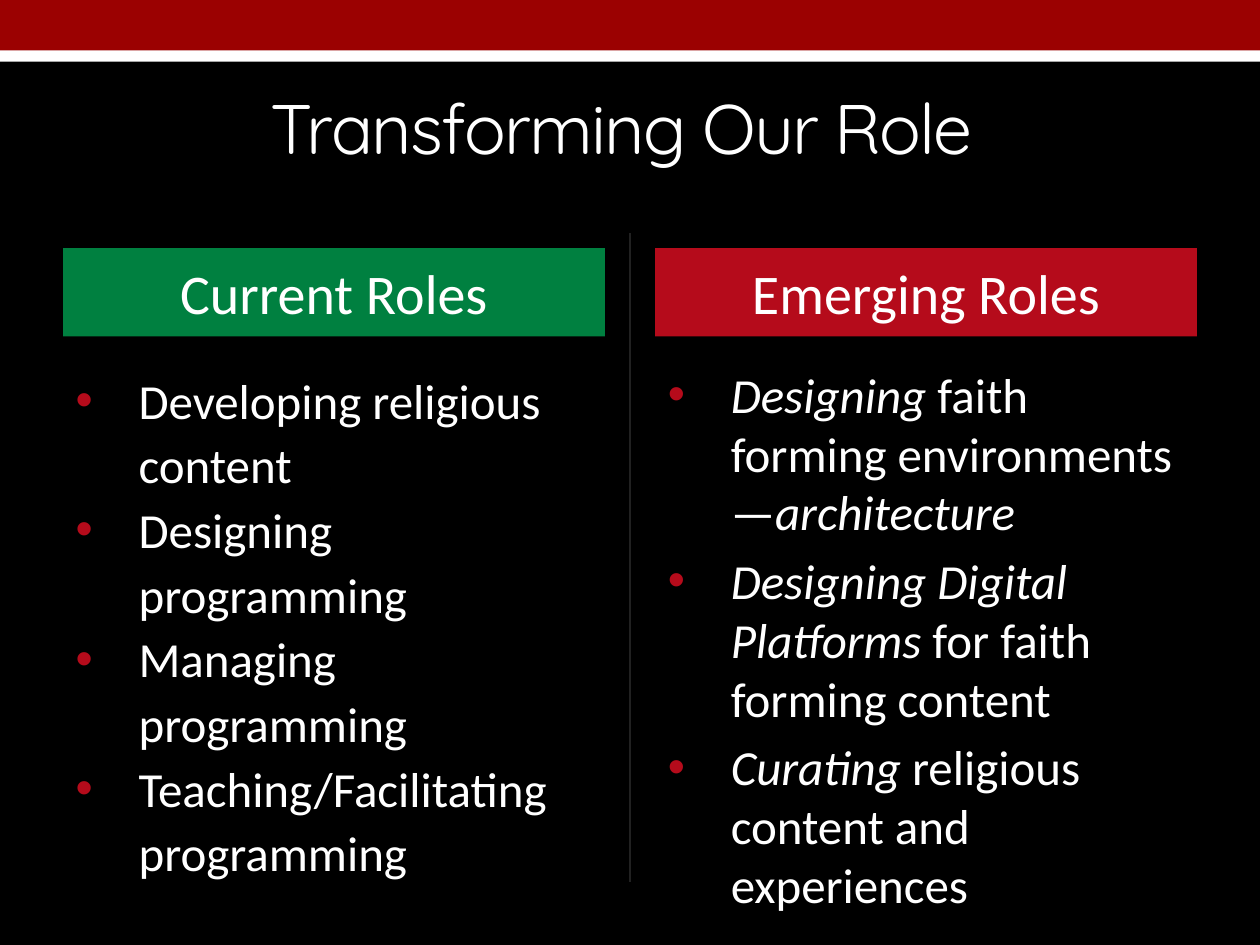
from dataclasses import dataclass

from lxml.etree import SubElement
from pptx import Presentation
from pptx.dml.color import RGBColor
from pptx.enum.shapes import MSO_CONNECTOR, MSO_SHAPE
from pptx.enum.text import MSO_ANCHOR, MSO_AUTO_SIZE, PP_ALIGN
from pptx.oxml.ns import qn
from pptx.util import Inches, Pt

BLACK = RGBColor(0x00, 0x00, 0x00)
WHITE = RGBColor(0xFF, 0xFF, 0xFF)
DARK_RED = RGBColor(0x9B, 0x01, 0x01)
RED = RGBColor(0xB5, 0x0B, 0x1B)
GREEN = RGBColor(0x00, 0x80, 0x40)
GREY = RGBColor(0x21, 0x21, 0x21)

COMPARISON_LAYOUT = 4
COLUMN_WIDTH = 4.3
INDENT = Inches(0.5)
TITLE_FONT = {"name": "Quicksand", "size": Pt(40), "bold": False}
HEADING_FONT = {"name": "Calibri", "size": Pt(32), "bold": False}
BULLET_FONT = {"name": "Calibri", "size": Pt(28), "bold": False}


@dataclass(frozen=True)
class Run:
    text: str
    italic: bool = False


@dataclass(frozen=True)
class Column:
    heading: str
    color: RGBColor
    left: float
    placeholders: tuple[int, int]
    line_spacing: float
    space_before: float
    bullets: list[list[Run]]


COLUMNS = [
    Column("Current Roles", GREEN, 0.5, (1, 2), 1.1, 0, [
        [Run("Developing religious content")],
        [Run("Designing programming")],
        [Run("Managing programming")],
        [Run("Teaching/Facilitating programming")],
    ]),
    Column("Emerging Roles", RED, 5.2, (3, 4), 1.0, 5.6, [
        [Run("Designing", True), Run(" faith forming environments—"),
         Run("architecture", True)],
        [Run("Designing Digital Platforms", True),
         Run(" for faith forming content")],
        [Run("Curating", True), Run(" religious content and experiences")],
    ]),
]


def place(shape, left: float, top: float, width: float, height: float,
          anchor: MSO_ANCHOR):
    """Move a placeholder and return its text frame."""
    shape.left, shape.top = Inches(left), Inches(top)
    shape.width, shape.height = Inches(width), Inches(height)
    frame = shape.text_frame
    frame.word_wrap = True
    frame.auto_size = MSO_AUTO_SIZE.NONE
    frame.vertical_anchor = anchor
    return frame


def add_run(paragraph, run: Run, font_values: dict):
    text_run = paragraph.add_run()
    text_run.text = run.text
    for name, value in font_values.items():
        setattr(text_run.font, name, value)
    text_run.font.italic = run.italic
    text_run.font.color.rgb = WHITE
    return text_run


def add_centered_line(frame, text: str, font_values: dict):
    paragraph = frame.paragraphs[0]
    paragraph.alignment = PP_ALIGN.CENTER
    paragraph.space_before = Pt(0)
    return add_run(paragraph, Run(text), font_values)


def add_bullet(paragraph, color: RGBColor) -> None:
    properties = paragraph._p.get_or_add_pPr()
    properties.set("marL", str(INDENT))
    properties.set("indent", str(-INDENT))
    bullet_color = SubElement(properties, qn("a:buClr"))
    SubElement(bullet_color, qn("a:srgbClr"), val=str(color))
    SubElement(properties, qn("a:buFont"), typeface="Arial")
    SubElement(properties, qn("a:buChar"), char="•")


def draw_band(slide, top: float, height: float, color: RGBColor) -> None:
    band = slide.shapes.add_shape(
        MSO_SHAPE.RECTANGLE, 0, Inches(top), Inches(10), Inches(height))
    band.shadow.inherit = False
    band.fill.solid()
    band.fill.fore_color.rgb = color
    band.line.fill.background()


def draw_divider(slide) -> None:
    divider = slide.shapes.add_connector(
        MSO_CONNECTOR.STRAIGHT, Inches(5), Inches(1.85), Inches(5), Inches(7))
    divider.line.color.rgb = GREY
    divider.line.width = Pt(1.5)
    SubElement(divider._element.spPr, qn("a:effectLst"))


def draw_title(slide) -> None:
    frame = place(slide.shapes.title, 0, 0.46, 10, 1.09, MSO_ANCHOR.MIDDLE)
    run = add_centered_line(frame, "Transforming Our Role ", TITLE_FONT)
    run.font._element.set("spc", "-100")


def draw_column(slide, column: Column) -> None:
    heading, body = (slide.placeholders[index] for index in column.placeholders)
    heading.fill.solid()
    heading.fill.fore_color.rgb = column.color
    frame = place(heading, column.left, 1.97, COLUMN_WIDTH, 0.7,
                  MSO_ANCHOR.MIDDLE)
    add_centered_line(frame, column.heading, HEADING_FONT)

    frame = place(body, column.left, 2.84, COLUMN_WIDTH, 4.32, MSO_ANCHOR.TOP)
    for number, runs in enumerate(column.bullets):
        paragraph = frame.add_paragraph() if number else frame.paragraphs[0]
        add_bullet(paragraph, RED)
        paragraph.line_spacing = column.line_spacing
        paragraph.space_before = Pt(column.space_before if number else 0)
        for run in runs:
            add_run(paragraph, run, BULLET_FONT)


def main() -> None:
    presentation = Presentation()
    presentation.slide_width = Inches(10)
    presentation.slide_height = Inches(7.5)
    layout = presentation.slide_layouts[COMPARISON_LAYOUT]
    slide = presentation.slides.add_slide(layout)
    slide.background.fill.solid()
    slide.background.fill.fore_color.rgb = BLACK

    draw_band(slide, 0.24, 0.25, WHITE)
    draw_band(slide, 0, 0.4, DARK_RED)
    draw_divider(slide)
    draw_title(slide)
    for column in COLUMNS:
        draw_column(slide, column)
    presentation.save("out.pptx")


if __name__ == "__main__":
    main()
